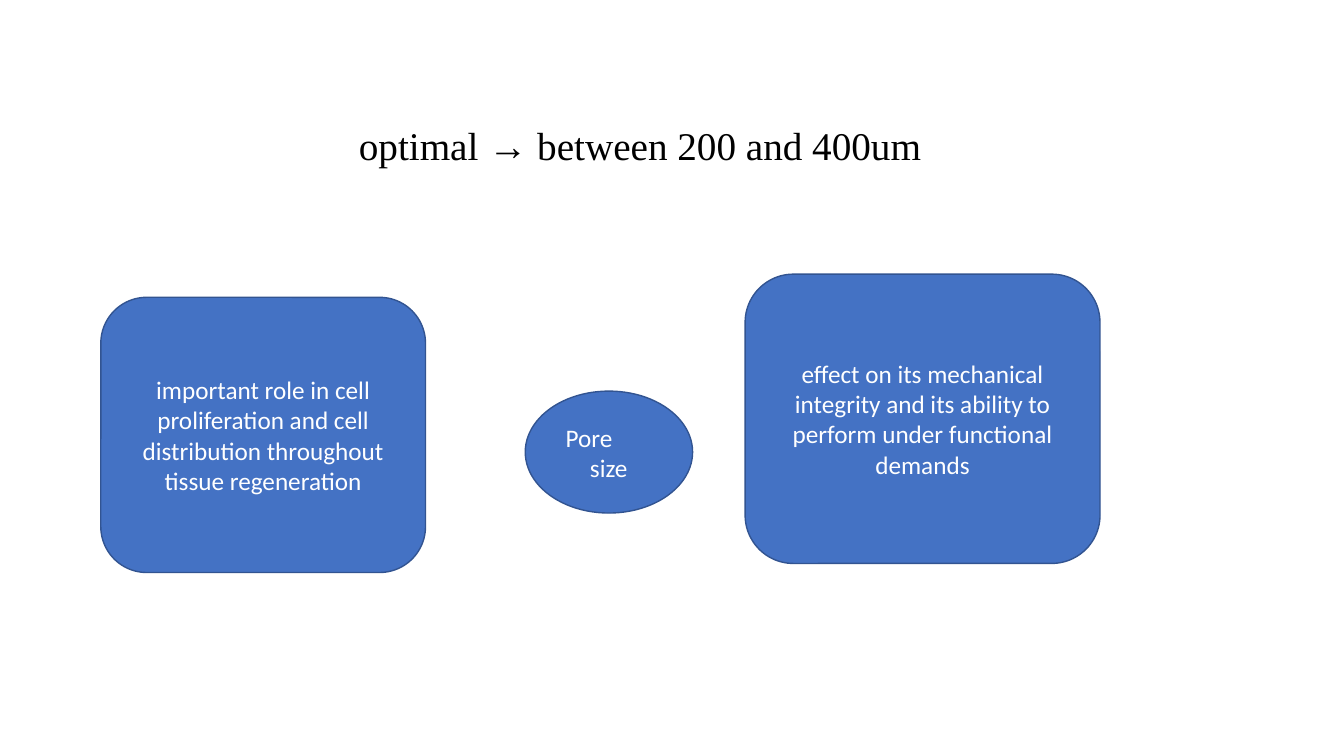
"""Build the pore size slide."""
from pptx import Presentation
from pptx.dml.color import RGBColor
from pptx.enum.shapes import MSO_SHAPE
from pptx.enum.text import MSO_ANCHOR, MSO_AUTO_SIZE, PP_ALIGN
from pptx.util import Inches, Pt

BLUE = RGBColor(0x44, 0x72, 0xC4)
EDGE = RGBColor(0x32, 0x54, 0x91)
WHITE = RGBColor(0xFF, 0xFF, 0xFF)
BLACK = RGBColor(0x00, 0x00, 0x00)

TITLE = "optimal → between 200 and 400um"
TITLE_BOX = (3.46, 1.15, 5.83, 0.57)
CELL_ROLE = ["important role in cell", "proliferation and cell",
             "distribution throughout", "tissue regeneration"]
MECHANICS = ["effect on its mechanical", "integrity and its ability to",
             "perform under functional", "demands"]
SHAPES = [
    (MSO_SHAPE.ROUNDED_RECTANGLE, (1, 2.95, 3.22, 2.73), CELL_ROLE, {}),
    (MSO_SHAPE.OVAL, (5.21, 3.88, 1.66, 1.21), ["Pore", "size"],
     {"align": PP_ALIGN.LEFT, "indents": (0.06, 0.3)}),
    (MSO_SHAPE.ROUNDED_RECTANGLE, (7.39, 2.72, 3.52, 2.87), MECHANICS, {}),
]


def write(sp, lines, size=18, font="Calibri", color=WHITE,
          align=PP_ALIGN.CENTER, indents=(), wrap=True):
    tf = sp.text_frame
    tf.word_wrap = wrap
    tf.vertical_anchor = MSO_ANCHOR.MIDDLE
    for i, line in enumerate(lines):
        p = tf.add_paragraph() if i else tf.paragraphs[0]
        p.alignment = align
        if indents:
            p._p.get_or_add_pPr().set("marL", str(Inches(indents[i])))
        r = p.add_run()
        r.text = line
        r.font.size = Pt(size)
        r.font.name = font
        r.font.color.rgb = color


prs = Presentation()
prs.slide_width, prs.slide_height = Inches(13.33), Inches(7.5)
s = prs.slides.add_slide(prs.slide_layouts[5])

title = s.shapes.title
title.left, title.top, title.width, title.height = map(Inches, TITLE_BOX)
write(title, [TITLE], size=28, font="Times New Roman", color=BLACK,
      align=PP_ALIGN.LEFT, wrap=False)
title.text_frame.auto_size = MSO_AUTO_SIZE.SHAPE_TO_FIT_TEXT

for kind, box, lines, style in SHAPES:
    sp = s.shapes.add_shape(kind, *map(Inches, box))
    sp.shadow.inherit = False
    sp.fill.solid()
    sp.fill.fore_color.rgb = BLUE
    sp.line.color.rgb = EDGE
    sp.line.width = Pt(1)
    write(sp, lines, **style)

prs.save("out.pptx")
